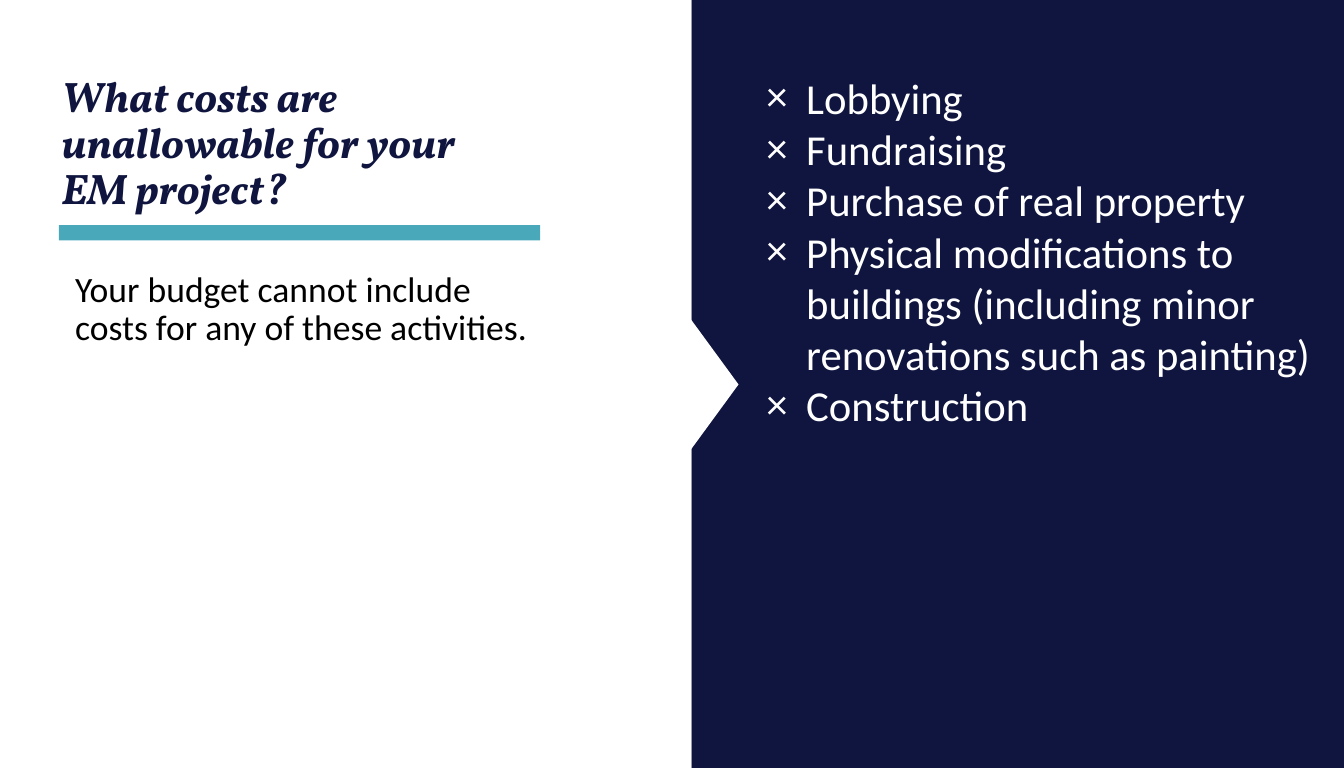
from lxml.etree import SubElement
from pptx import Presentation
from pptx.dml.color import RGBColor
from pptx.enum.shapes import MSO_SHAPE
from pptx.enum.text import MSO_ANCHOR
from pptx.oxml.ns import qn
from pptx.util import Cm, Pt

WIDE, HIGH = 26.67, 15.24
HALF = 13.72
NAVY, WHITE, TEAL, BLACK = "0F153E", "FFFFFF", "4AA8BB", "000000"

TITLE = ["What costs are unallowable for your EM project?"]
BODY = ["Your budget cannot include costs for any of these activities."]
COSTS = [
    "Lobbying",
    "Fundraising",
    "Purchase of real property",
    "Physical modifications to buildings (including minor renovations such as painting)",
    "Construction",
]

SHAPES = [
    (MSO_SHAPE.RECTANGLE, (HALF, 0, WIDE - HALF, HIGH), NAVY, 0),
    (MSO_SHAPE.RECTANGLE, (0, 0, HALF, HIGH), WHITE, 0),
    (MSO_SHAPE.RECTANGLE, (1.17, 4.47, 9.55, 0.3), TEAL, 0),
    (MSO_SHAPE.ISOSCELES_TRIANGLE, (12.9, 7.16, 2.57, 0.94), WHITE, 90),
]

TEXTS = [
    (TITLE, (0.97, 0.89, 9.75, 3.48), NAVY, MSO_ANCHOR.BOTTOM, None,
     {"name": "Vollkorn", "size": Pt(24), "bold": True, "italic": True},
     {"line_spacing": 0.9}),
    (BODY, (1.24, 5.26, 9.91, 9.09), BLACK, MSO_ANCHOR.TOP, None,
     {"name": "Calibri", "size": Pt(20)},
     {"line_spacing": 0.9, "space_before": Pt(7.9)}),
    (COSTS, (14.96, 1.3, 12.29, 7.44), WHITE, MSO_ANCHOR.TOP, "×",
     {"name": "Calibri", "size": Pt(24)}, {}),
]


def tint(code):
    return RGBColor.from_string(code)


def style(item, values):
    for key, value in values.items():
        setattr(item, key, value)


def mark(para, sign):
    props = para._p.get_or_add_pPr()
    dent = Cm(0.79)
    props.set("marL", str(dent))
    props.set("indent", str(-dent))
    SubElement(props, qn("a:buFont"), typeface="Calibri")
    SubElement(props, qn("a:buChar"), char=sign)


def draw(slide, kind, box, fill, turn):
    shape = slide.shapes.add_shape(kind, *map(Cm, box))
    shape.shadow.inherit = False
    shape.fill.solid()
    shape.fill.fore_color.rgb = tint(fill)
    shape.line.fill.background()
    shape.rotation = turn


def write(slide, lines, box, ink, anchor, sign, font, gaps):
    frame = slide.shapes.add_textbox(*map(Cm, box)).text_frame
    style(frame, {"word_wrap": True, "vertical_anchor": anchor})
    for spot, line in enumerate(lines):
        para = frame.add_paragraph() if spot else frame.paragraphs[0]
        style(para, gaps)
        if sign:
            mark(para, sign)
        run = para.add_run()
        run.text = line
        style(run.font, font)
        run.font.color.rgb = tint(ink)


def main():
    deck = Presentation()
    style(deck, {"slide_width": Cm(WIDE), "slide_height": Cm(HIGH)})
    slide = deck.slides.add_slide(deck.slide_layouts[6])
    for part in SHAPES:
        draw(slide, *part)
    for part in TEXTS:
        write(slide, *part)
    deck.save("out.pptx")


if __name__ == "__main__":
    main()
